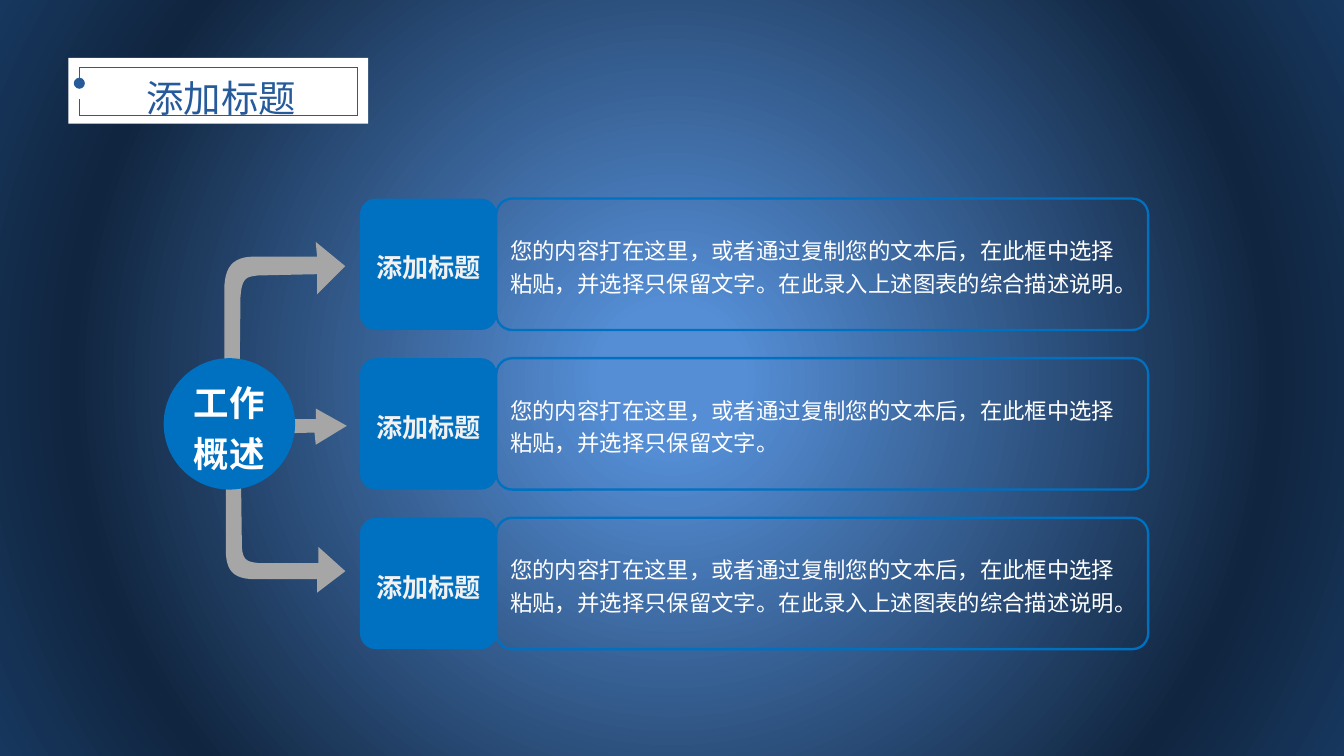
from pptx import Presentation
from pptx.dml.color import RGBColor
from pptx.enum.shapes import MSO_CONNECTOR, MSO_SHAPE
from pptx.enum.text import MSO_ANCHOR, MSO_AUTO_SIZE, PP_ALIGN
from pptx.oxml import parse_xml
from pptx.oxml.ns import nsdecls
from pptx.util import Pt

STRAIGHT = MSO_CONNECTOR.STRAIGHT
RECT, ROUNDED, OVAL = MSO_SHAPE.RECTANGLE, MSO_SHAPE.ROUNDED_RECTANGLE, MSO_SHAPE.OVAL
MIDDLE, TOP = MSO_ANCHOR.MIDDLE, MSO_ANCHOR.TOP
LEFT, CENTER = PP_ALIGN.LEFT, PP_ALIGN.CENTER
GROW = MSO_AUTO_SIZE.SHAPE_TO_FIT_TEXT

WHITE = RGBColor(0xFF, 0xFF, 0xFF)
OFF_WHITE = RGBColor(0xF2, 0xF2, 0xF2)
NAVY = RGBColor(0x26, 0x5A, 0x9A)
BLUE = RGBColor(0x00, 0x70, 0xC0)
GRAY = RGBColor(0xA6, 0xA6, 0xA6)
GLOW = RGBColor(0x55, 0x8E, 0xD5)
NIGHT = RGBColor(0x10, 0x25, 0x3F)
DUSK = RGBColor(0x17, 0x37, 0x5E)
CJK_FONT = "Noto Sans CJK SC"

TITLE = "添加标题"
HUB = ["工作", "概述"]
SHORT_NOTE = "您的内容打在这里，或者通过复制您的文本后，在此框中选择粘贴，并选择只保留文字。"
LONG_NOTE = SHORT_NOTE + "在此录入上述图表的综合描述说明。"
ROWS = [("添加标题", LONG_NOTE), ("添加标题", SHORT_NOTE), ("添加标题", LONG_NOTE)]
BACKDROP = [(9, GLOW), (78, NIGHT), (100, DUSK)]

FRAME_LEFT, FRAME_RIGHT, FRAME_TOP, FRAME_BOTTOM = 42.5, 191.5, 36, 62
FRAME = [
    (FRAME_LEFT, FRAME_TOP, FRAME_RIGHT, FRAME_TOP),
    (FRAME_RIGHT, FRAME_TOP, FRAME_RIGHT, FRAME_BOTTOM),
    (FRAME_RIGHT, FRAME_BOTTOM, FRAME_LEFT, FRAME_BOTTOM),
    (FRAME_LEFT, FRAME_BOTTOM, FRAME_LEFT, 53.3),
]
FRAME_STUB = (FRAME_LEFT, FRAME_TOP, FRAME_LEFT, 44.6)

# A pair is a straight step; six numbers are a Bezier step.
ARROWS = [
    [(128.9, 238.3), (129.6, 291.6), (129.6, 301, 133.2, 301, 139, 301.7),
     (170.6, 301.7), (170.6, 293), (185, 306), (169.9, 317.5), (169.9, 310.3),
     (136.8, 310.3), (124.6, 310.3, 121, 305.3, 121, 294.5),
     (121, 236.9), (121.7, 227.5, 126.7, 228.2, 128.9, 238.3)],
    [(108.7, 233.3), (168.5, 231.8), (169.2, 238.3), (185.8, 228.2),
     (169.2, 218.9), (169.2, 224.6), (108.7, 224.6)],
    [(128.2, 221), (128.9, 159.1), (129.6, 148.3, 132.5, 148.3, 138.2, 147.6),
     (169.9, 146.9), (169.9, 157.7), (185, 142.6), (169.2, 129.6), (169.9, 137.5),
     (136.1, 137.5), (124.6, 137.5, 120.2, 143.3, 120.2, 155.5),
     (120.2, 222.5), (121.7, 233.3, 126.7, 232.6, 128.2, 221)],
]
CURVE_STEPS = 12

ROW_TOP, ROW_PITCH, ROW_HEIGHT = 106.4, 85.5, 70.4
LABEL_LEFT, LABEL_WIDTH = 192.8, 73.4
NOTE_LEFT, NOTE_WIDTH = 265.9, 349.2
HUB_LEFT = 87.7


def write(shape, paragraphs, size, color, font=CJK_FONT, bold=False, align=CENTER,
          spacing=1.2, anchor=MIDDLE, insets=(5, 2.2)):
    frame = shape.text_frame
    frame.word_wrap = True
    frame.vertical_anchor = anchor
    frame.margin_left = frame.margin_right = Pt(insets[0])
    frame.margin_top = frame.margin_bottom = Pt(insets[1])
    for i, text in enumerate(paragraphs):
        paragraph = frame.add_paragraph() if i else frame.paragraphs[0]
        paragraph.alignment = align
        paragraph.line_spacing = spacing
        run = paragraph.add_run()
        run.text = text
        run.font.size = Pt(size)
        run.font.bold = bold
        run.font.color.rgb = color
        run.font.name = font
        run.font._element.append(
            parse_xml(f'<a:ea {nsdecls("a")} typeface="{CJK_FONT}"/>'))


def paint(shape, fill=None, line=None):
    shape.shadow.inherit = False
    if fill is None:
        shape.fill.background()
    else:
        shape.fill.solid()
        shape.fill.fore_color.rgb = fill
    if line is None:
        shape.line.fill.background()
    else:
        shape.line.color.rgb = line
        shape.line.width = Pt(1.25)


def add_box(shapes, kind, left, top, width, height, fill=None, line=None, corner=None):
    box = shapes.add_shape(kind, Pt(left), Pt(top), Pt(width), Pt(height))
    if corner is not None:
        box.adjustments[0] = corner
    paint(box, fill, line)
    return box


def add_line(shapes, ends):
    line = shapes.add_connector(STRAIGHT, *map(Pt, ends))
    line.line.color.rgb = NAVY
    line.line.width = Pt(0.25)
    line._element.spPr.append(parse_xml(f'<a:effectLst {nsdecls("a")}/>'))
    return line


def flatten(steps):
    points = [steps[0]]
    for step in steps[1:]:
        if len(step) == 2:
            points.append(step)
            continue
        corners = [points[-1], step[:2], step[2:4], step[4:]]
        for i in range(1, CURVE_STEPS + 1):
            t = i / CURVE_STEPS
            weights = ((1 - t) ** 3, 3 * t * (1 - t) ** 2, 3 * t * t * (1 - t), t ** 3)
            points.append(tuple(sum(w * c[axis] for w, c in zip(weights, corners))
                                for axis in (0, 1)))
    return points


def add_arrow(shapes, steps):
    points = [(Pt(x), Pt(y)) for x, y in flatten(steps)]
    builder = shapes.build_freeform(*points[0])
    builder.add_line_segments(points[1:], close=True)
    paint(builder.convert_to_shape(), GRAY)


def set_backdrop(slide):
    stops = "".join(f'<a:gs pos="{pos * 1000}"><a:srgbClr val="{color}"/></a:gs>'
                    for pos, color in BACKDROP)
    slide.element.cSld.insert(0, parse_xml(
        f'<p:bg {nsdecls("p", "a")}><p:bgPr><a:gradFill rotWithShape="1">'
        f'<a:gsLst>{stops}</a:gsLst><a:path path="circle">'
        '<a:fillToRect l="50000" t="50000" r="50000" b="50000"/></a:path>'
        '</a:gradFill><a:effectLst/></p:bgPr></p:bg>'))


def add_title(slide):
    banner = slide.shapes.add_group_shape().shapes
    add_box(banner, RECT, 36.7, 31, 160.6, 35.3, WHITE)
    for ends in FRAME:
        add_line(banner, ends)
    stub = add_line(banner, FRAME_STUB)
    stub.line._get_or_add_ln().append(
        parse_xml(f'<a:tailEnd {nsdecls("a")} type="oval"/>'))
    title = banner.add_textbox(Pt(45.4), Pt(24.5), Pt(146.2), Pt(39.6))
    write(title, [TITLE], 20, NAVY, spacing=1.5, anchor=TOP, insets=(7.2, 3.6))
    title.text_frame.auto_size = GROW


def main():
    deck = Presentation()
    deck.slide_width, deck.slide_height = Pt(720), Pt(405)
    slide = deck.slides.add_slide(deck.slide_layouts[6])
    shapes = slide.shapes
    set_backdrop(slide)
    add_title(slide)
    for steps in ARROWS:
        add_arrow(shapes, steps)
    for i, (label, note) in enumerate(ROWS):
        top = ROW_TOP + i * ROW_PITCH
        note_box = add_box(shapes, ROUNDED, NOTE_LEFT, top, NOTE_WIDTH, ROW_HEIGHT,
                           line=BLUE, corner=0.12)
        write(note_box, [note], 12, WHITE, align=LEFT)
        label_box = add_box(shapes, ROUNDED, LABEL_LEFT, top, LABEL_WIDTH, ROW_HEIGHT,
                            fill=BLUE, corner=0.12)
        write(label_box, [label], 14, OFF_WHITE, bold=True)
    hub = add_box(shapes, OVAL, HUB_LEFT, ROW_TOP + ROW_PITCH, ROW_HEIGHT, ROW_HEIGHT, BLUE)
    write(hub, HUB, 19, WHITE, font="Arial", bold=True)
    deck.save("out.pptx")


if __name__ == "__main__":
    main()
